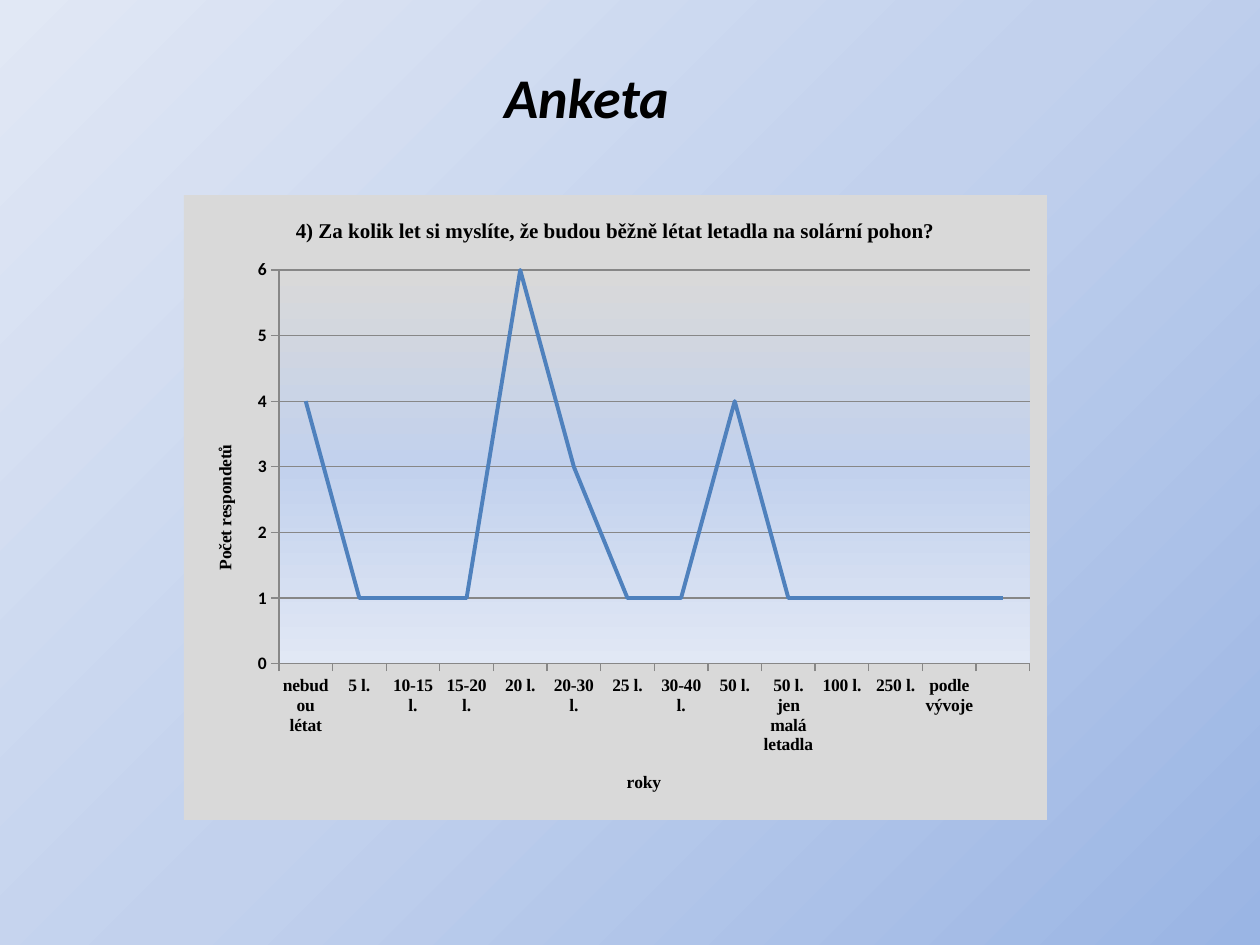
import lxml.etree
import pptx
import pptx.chart.data
import pptx.dml.color
import pptx.enum.chart
import pptx.enum.text
import pptx.oxml
import pptx.oxml.ns
import pptx.util

PX_PER_INCH = 126
BODY_FONT = "Calibri"
CHART_FONT = "Times New Roman"
BLACK = "000000"
GRID_GREY = "878787"
SKY_STOPS = [(50, "C2D1ED"), (100, "E1E8F5")]
SURVEY = [
    ("nebudou létat", 4), ("5 l.", 1), ("10-15 l.", 1), ("15-20 l.", 1),
    ("20 l.", 6), ("20-30 l.", 3), ("25 l.", 1), ("30-40 l.", 1),
    ("50 l.", 4), ("50 l. jen malá letadla", 1), ("100 l.", 1),
    ("250 l.", 1), ("podle vývoje", 1), ("", 1),
]


def px(length):
    return pptx.util.Emu(round(length * 914400 / PX_PER_INCH))


def color(value):
    return pptx.dml.color.RGBColor.from_string(value)


def style_font(font, name, size, bold=True, italic=False):
    font.name = name
    font.size = pptx.util.Pt(size)
    font.bold = bold
    font.italic = italic
    font.color.rgb = color(BLACK)


def style_line(line, value, width):
    line.color.rgb = color(value)
    line.width = pptx.util.Pt(width)


def gradient_xml(stops, angle):
    gs = "".join(
        f'<a:gs pos="{position * 1000}"><a:srgbClr val="{value}"/></a:gs>'
        for position, value in stops
    )
    return (
        f'<a:gradFill {pptx.oxml.ns.nsdecls("a")} rotWithShape="1">'
        f'<a:gsLst>{gs}</a:gsLst><a:lin ang="{angle * 60000}" scaled="0"/>'
        "</a:gradFill>"
    )


def chart_area_properties(fill):
    return pptx.oxml.parse_xml(
        f'<c:spPr {pptx.oxml.ns.nsdecls("c", "a")}>{fill}'
        "<a:ln><a:noFill/></a:ln></c:spPr>"
    )


def paint_background(slide):
    fill = slide.background.fill
    fill.solid()
    solid = slide.element.find(".//" + pptx.oxml.ns.qn("a:solidFill"))
    gradient = gradient_xml([(0, "9AB5E4")] + SKY_STOPS, 225)
    solid.getparent().replace(solid, pptx.oxml.parse_xml(gradient))


def place_heading(slide, left, top, width, height):
    heading = slide.shapes.title
    heading.left, heading.top = px(left), px(top)
    heading.width, heading.height = px(width), px(height)
    frame = heading.text_frame
    frame.text = "Anketa"
    frame.word_wrap = False
    frame.auto_size = pptx.enum.text.MSO_AUTO_SIZE.NONE
    frame.vertical_anchor = pptx.enum.text.MSO_ANCHOR.MIDDLE
    paragraph = frame.paragraphs[0]
    paragraph.alignment = pptx.enum.text.PP_ALIGN.CENTER
    style_font(paragraph.runs[0].font, BODY_FONT, 32, italic=True)


def set_title(owner, wording, size):
    frame = (owner.chart_title if hasattr(owner, "chart_title") else owner.axis_title).text_frame
    frame.text = wording
    style_font(frame.paragraphs[0].runs[0].font, CHART_FONT, size)


def style_axis(axis, wording, label_font):
    set_title(axis, wording, 10)
    style_font(axis.tick_labels.font, label_font, 10)
    style_line(axis.format.line, GRID_GREY, 0.75)
    axis.major_tick_mark = pptx.enum.chart.XL_TICK_MARK.OUTSIDE
    axis.minor_tick_mark = pptx.enum.chart.XL_TICK_MARK.NONE


def fill_areas(chart):
    panel = f'<a:solidFill><a:srgbClr val="D9D9D9"/></a:solidFill>'
    space = chart.element
    space.find(pptx.oxml.ns.qn("c:chart")).addnext(chart_area_properties(panel))
    plot_area = space.find(".//" + pptx.oxml.ns.qn("c:plotArea"))
    plot_area.append(chart_area_properties(gradient_xml([(0, "D9D9D9")] + SKY_STOPS, 90)))
    return plot_area


def fix_plot_layout(plot_area, left, top, width, height):
    for automatic in plot_area.findall(pptx.oxml.ns.qn("c:layout")):
        plot_area.remove(automatic)
    sizes = "".join(
        f'<c:{key} val="{value}"/>'
        for key, value in zip("xywh", (left, top, width, height))
    )
    plot_area.insert(0, pptx.oxml.parse_xml(
        f'<c:layout {pptx.oxml.ns.nsdecls("c")}><c:manualLayout>'
        '<c:layoutTarget val="inner"/><c:xMode val="edge"/><c:yMode val="edge"/>'
        f"{sizes}</c:manualLayout></c:layout>"
    ))


def place_survey_chart(slide, left, top, width, height):
    survey_data = pptx.chart.data.CategoryChartData()
    survey_data.categories = [answer for answer, count in SURVEY]
    survey_data.add_series("Series 1", [count for answer, count in SURVEY])
    chart = slide.shapes.add_chart(
        pptx.enum.chart.XL_CHART_TYPE.LINE,
        px(left), px(top), px(width), px(height), survey_data,
    ).chart
    chart.has_legend = False
    style_font(chart.font, BODY_FONT, 10, bold=False)
    set_title(chart, "4) Za kolik let si myslíte, že budou běžně létat letadla na solární pohon?", 12)
    chart.chart_title.include_in_layout = False

    style_axis(chart.category_axis, "roky", CHART_FONT)
    counts = chart.value_axis
    style_axis(counts, "Počet respondetů", BODY_FONT)
    counts.minimum_scale, counts.maximum_scale, counts.major_unit = 0, 6, 1
    counts.has_major_gridlines = True
    style_line(counts.major_gridlines.format.line, GRID_GREY, 0.75)

    chart.plots[0].vary_by_categories = False
    answers = chart.plots[0].series[0]
    answers.smooth = False
    answers.marker.style = pptx.enum.chart.XL_MARKER_STYLE.NONE
    style_line(answers.format.line, "4F81BD", 2.25)

    plot_area = fill_areas(chart)
    fix_plot_layout(plot_area, 0.11, 0.12, 0.87, 0.63)


def main():
    deck = pptx.Presentation()
    deck.slide_width, deck.slide_height = px(1260), px(945)
    slide = deck.slides.add_slide(deck.slide_layouts[5])
    paint_background(slide)
    place_heading(slide, 491, 56, 191, 80)
    place_survey_chart(slide, 184, 195, 863, 625)
    deck.save("out.pptx")


if __name__ == "__main__":
    main()
